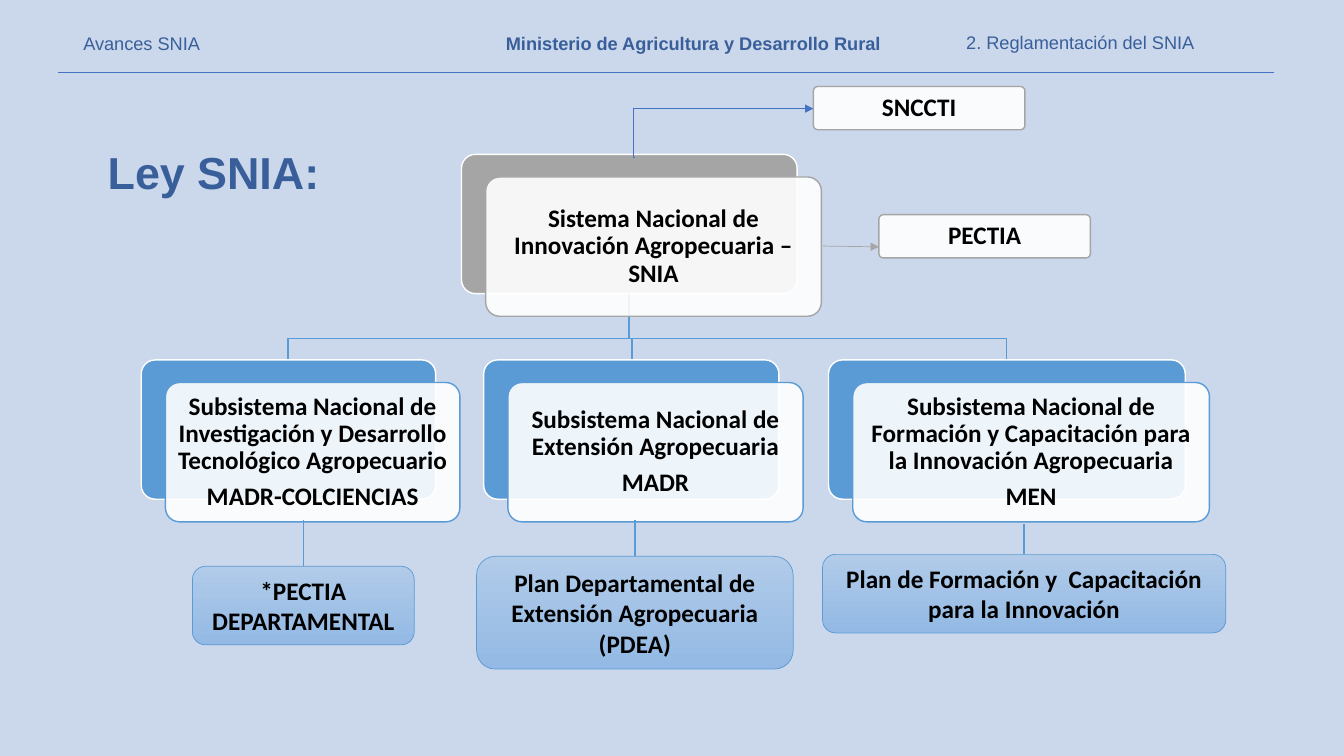
from dataclasses import dataclass

from lxml.etree import SubElement
from pptx import Presentation
from pptx.dml.color import RGBColor
from pptx.enum.shapes import MSO_CONNECTOR, MSO_SHAPE
from pptx.enum.text import MSO_ANCHOR, MSO_AUTO_SIZE, PP_ALIGN
from pptx.oxml.ns import qn
from pptx.shapes.autoshape import Shape
from pptx.shapes.connector import Connector
from pptx.slide import Slide
from pptx.util import Cm, Pt

COLORS = {
    "background": "CBD7EA",
    "heading": "395F9B",
    "accent": "4472C4",
    "blue": "5B9BD5",
    "gray": "A5A5A5",
    "white": "FFFFFF",
    "black": "000000",
    "plan_top": "B1CBE9",
    "plan_bottom": "93B9E4",
}
CARD_HEIGHT = 3.51
CARD_OFFSET = (0.61, 0.57)
BRANCH_START = (15.85, 7.39)
BRANCH_BEND = 8.53
BRANCH_END = 9.07


@dataclass
class Box:
    """A text with its frame in centimetres."""

    left: float
    top: float
    width: float
    height: float
    lines: tuple[str, ...]
    color: str = "gray"
    bold: bool = True


@dataclass
class Line:
    """A straight or bent line in centimetres."""

    start: tuple[float, float]
    end: tuple[float, float]
    color: str = "blue"
    weight: float = 1
    arrow: bool = False
    bent: bool = False


HEADERS = [
    Box(1.85, 0.69, 3.48, 0.81, ("Avances SNIA",), bold=False),
    Box(12.5, 0.69, 10.08, 0.81, ("Ministerio de Agricultura y Desarrollo Rural",)),
    Box(24.1, 0.66, 6.32, 0.81, ("2. Reglamentación del SNIA",), bold=False),
]
TITLE = Box(2.46, 3.51, 7.01, 1.63, ("Ley SNIA:",))
CARDS = [
    Box(11.63, 3.89, 8.46, CARD_HEIGHT,
        ("Sistema Nacional de Innovación Agropecuaria –SNIA",)),
    Box(3.56, BRANCH_END, 7.42, CARD_HEIGHT,
        ("Subsistema Nacional de Investigación y Desarrollo Tecnológico Agropecuario",
         "MADR-COLCIENCIAS"), "blue"),
    Box(12.19, BRANCH_END, 7.44, CARD_HEIGHT,
        ("Subsistema Nacional de Extensión Agropecuaria", "MADR"), "blue"),
    Box(20.88, BRANCH_END, 8.99, CARD_HEIGHT,
        ("Subsistema Nacional de Formación y Capacitación para la Innovación Agropecuaria",
         "MEN"), "blue"),
]
TAGS = [
    Box(20.5, 2.18, 5.33, 1.09, ("SNCCTI",)),
    Box(22.15, 5.41, 5.33, 1.09, ("PECTIA",)),
]
PLANS = [
    Box(4.85, 14.27, 5.59, 1.98, ("*PECTIA DEPARTAMENTAL",), "blue"),
    Box(12.01, 14.02, 7.98, 2.84,
        ("Plan Departamental de Extensión Agropecuaria (PDEA)",), "blue"),
    Box(20.73, 13.97, 10.16, 1.98,
        ("Plan de Formación y  Capacitación para la Innovación",), "blue"),
]
BRANCH_TARGETS = [25.37, 15.93, 7.26]
LINES = [
    Line((1.47, 1.83), (32.11, 1.83), "accent", 0.5),
    Line((7.65, 13.11), (7.65, 14.27)),
    Line((16, 13.11), (16, 14.02)),
    Line((25.81, 13.21), (25.81, 13.97)),
    Line((20.73, 6.2), (22.15, 6.22), "gray", 0.5, arrow=True),
    Line((16, 3.96), (20.5, 2.74), "accent", 0.5, arrow=True, bent=True),
]


def rgb(name: str) -> RGBColor:
    """Look up a named colour."""
    return RGBColor.from_string(COLORS[name])


def write(shape: Shape, box: Box, font: str, size: float, color: str,
          alignment: PP_ALIGN) -> None:
    """Write the lines of a box as formatted paragraphs."""
    frame = shape.text_frame
    frame.text = "\n".join(box.lines)
    for paragraph in frame.paragraphs:
        paragraph.alignment = alignment
        paragraph.font.name = font
        paragraph.font.size = Pt(size)
        paragraph.font.bold = box.bold
        paragraph.font.color.rgb = rgb(color)


def add_rounded(slide: Slide, box: Box, line: str, weight: float) -> Shape:
    """Add an outlined rounded rectangle without shadow."""
    shape = slide.shapes.add_shape(
        MSO_SHAPE.ROUNDED_RECTANGLE,
        Cm(box.left), Cm(box.top), Cm(box.width), Cm(box.height))
    shape.shadow.inherit = False
    shape.line.color.rgb = rgb(line)
    shape.line.width = Pt(weight)
    return shape


def add_panel(slide: Slide, box: Box) -> None:
    """Add a translucent white panel with its text."""
    panel = add_rounded(slide, box, box.color, 1)
    panel.adjustments[0] = 0.1
    panel.fill.solid()
    panel.fill.fore_color.rgb = rgb("white")
    fill_color = panel._element.spPr.find(qn("a:solidFill"))[0]
    SubElement(fill_color, qn("a:alpha"), val="90000")
    write(panel, box, "Calibri", 18, "black", PP_ALIGN.CENTER)
    frame = panel.text_frame
    frame.word_wrap = True
    frame.vertical_anchor = MSO_ANCHOR.MIDDLE
    frame.margin_left = frame.margin_right = Cm(0.18)
    frame.margin_top = frame.margin_bottom = Cm(0.18)
    for paragraph in frame.paragraphs:
        paragraph.line_spacing = 0.9
        paragraph.space_after = Pt(6.3)


def add_card(slide: Slide, box: Box) -> None:
    """Add a coloured back plate and the panel shifted over it."""
    plate = add_rounded(slide, box, "white", 1)
    plate.adjustments[0] = 0.1
    plate.fill.solid()
    plate.fill.fore_color.rgb = rgb(box.color)
    add_panel(slide, Box(box.left + CARD_OFFSET[0], box.top + CARD_OFFSET[1],
                         box.width, box.height, box.lines, box.color))


def add_plan(slide: Slide, box: Box) -> None:
    """Add a gradient box with a plan name."""
    plan = add_rounded(slide, box, box.color, 0.5)
    plan.fill.gradient()
    plan.fill.gradient_angle = 270
    for stop, color in zip(plan.fill.gradient_stops, ("plan_top", "plan_bottom")):
        stop.color.rgb = rgb(color)
    write(plan, box, "Calibri", 18, "black", PP_ALIGN.CENTER)
    plan.text_frame.word_wrap = True
    plan.text_frame.vertical_anchor = MSO_ANCHOR.MIDDLE


def add_branch(slide: Slide, target: float) -> None:
    """Add the stepped line from the system to one subsystem."""
    left, top = BRANCH_START
    builder = slide.shapes.build_freeform(Cm(left), Cm(top))
    corners = [(left, BRANCH_BEND), (target, BRANCH_BEND), (target, BRANCH_END)]
    builder.add_line_segments([(Cm(x), Cm(y)) for x, y in corners], close=False)
    branch = builder.convert_to_shape()
    branch.shadow.inherit = False
    branch.fill.background()
    branch.line.color.rgb = rgb("blue")
    branch.line.width = Pt(1)


def add_line(slide: Slide, line: Line) -> Connector:
    """Add a connector with its optional bend and arrowhead."""
    kind = MSO_CONNECTOR.ELBOW if line.bent else MSO_CONNECTOR.STRAIGHT
    connector = slide.shapes.add_connector(
        kind, *(Cm(value) for value in line.start + line.end))
    connector.line.color.rgb = rgb(line.color)
    connector.line.width = Pt(line.weight)
    properties = connector._element.spPr
    if line.bent:
        guides = properties.find(qn("a:prstGeom")).find(qn("a:avLst"))
        SubElement(guides, qn("a:gd"), name="adj1", fmla="val -1000")
    if line.arrow:
        SubElement(properties.find(qn("a:ln")), qn("a:tailEnd"), type="triangle")
    SubElement(properties, qn("a:effectLst"))
    return connector


def add_header(slide: Slide, box: Box) -> None:
    """Add one label of the top strip."""
    header = slide.shapes.add_textbox(
        Cm(box.left), Cm(box.top), Cm(box.width), Cm(box.height))
    header.text_frame.word_wrap = False
    write(header, box, "Arial", 13, "heading", PP_ALIGN.LEFT)


def set_title(slide: Slide, box: Box) -> None:
    """Move and format the title placeholder."""
    title = slide.shapes.title
    title.left, title.top = Cm(box.left), Cm(box.top)
    title.width, title.height = Cm(box.width), Cm(box.height)
    title.text_frame.auto_size = MSO_AUTO_SIZE.NONE
    title.text_frame.vertical_anchor = MSO_ANCHOR.TOP
    write(title, box, "Arial", 32, "heading", PP_ALIGN.LEFT)


def main() -> None:
    """Build the slide and save it."""
    presentation = Presentation()
    presentation.slide_width, presentation.slide_height = Cm(33.87), Cm(19.05)
    slide = presentation.slides.add_slide(presentation.slide_layouts[5])
    slide.background.fill.solid()
    slide.background.fill.fore_color.rgb = rgb("background")
    set_title(slide, TITLE)
    for target in BRANCH_TARGETS:
        add_branch(slide, target)
    for draw, boxes in ((add_header, HEADERS), (add_card, CARDS),
                        (add_plan, PLANS), (add_panel, TAGS)):
        for box in boxes:
            draw(slide, box)
    for line in LINES:
        add_line(slide, line)
    presentation.save("out.pptx")


if __name__ == "__main__":
    main()
